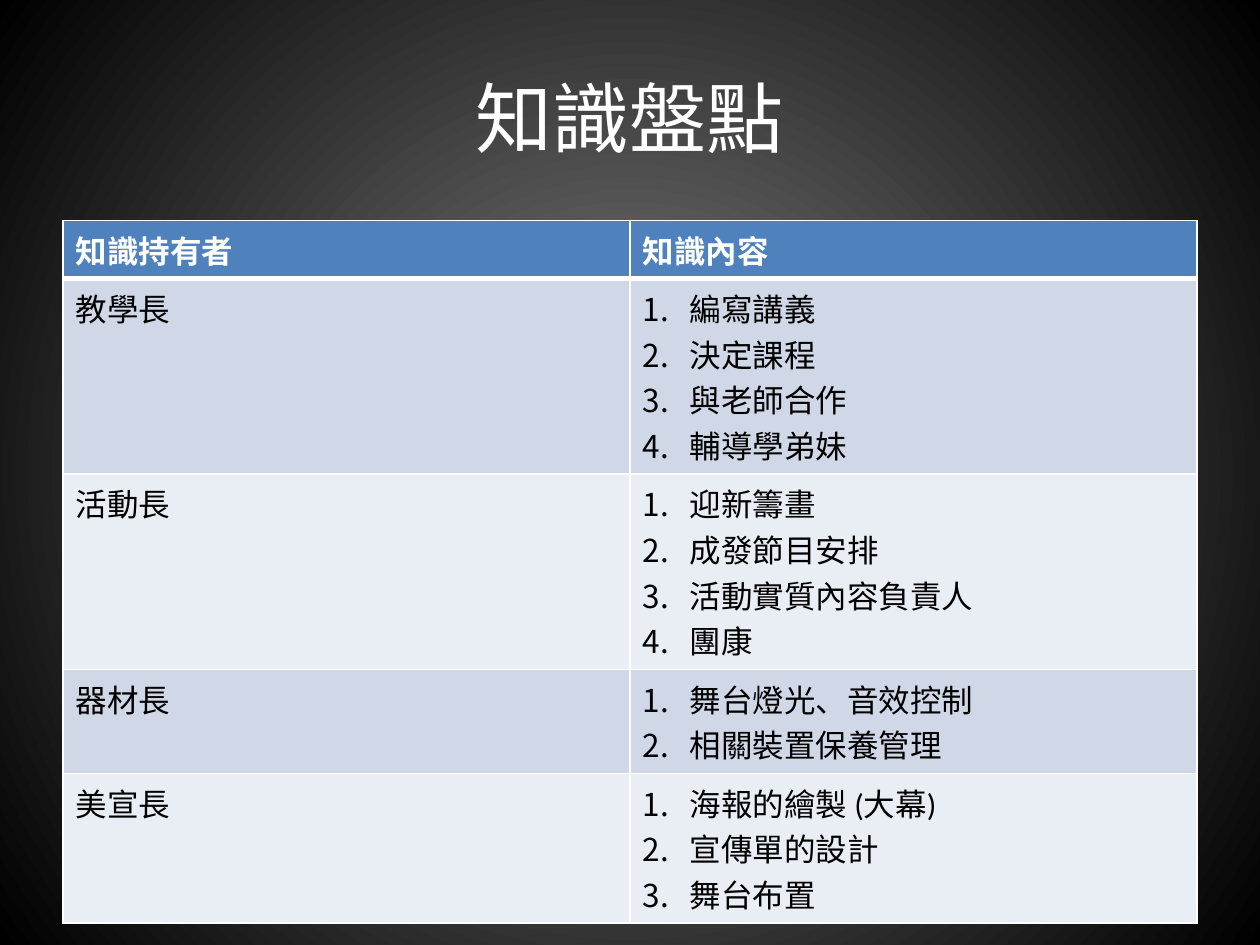
from lxml.etree import SubElement
from pptx import Presentation
from pptx.dml.color import RGBColor
from pptx.enum.text import MSO_ANCHOR, PP_ALIGN
from pptx.oxml.ns import qn
from pptx.util import Inches, Pt

FONT = "Calibri"
WHITE, BLACK, GRAY = "FFFFFF", "000000", "7F7F7F"
HEADER_BLUE = "4F81BD"
BANDS = ["D0D8E8", "E9EDF4"]
LINE_HEIGHT = Inches(1.45 / 4)
CELL_PADDING = Inches(0.1)
HEADINGS = ["知識持有者", "知識內容"]
HOLDERS = [
    ("教學長", ["編寫講義", "決定課程", "與老師合作", "輔導學弟妹"]),
    ("活動長", ["迎新籌畫", "成發節目安排", "活動實質內容負責人", "團康"]),
    ("器材長", ["舞台燈光、音效控制", "相關裝置保養管理"]),
    ("美宣長", ["海報的繪製 (大幕)", "宣傳單的設計", "舞台布置"]),
]


def rgb(color):
    return RGBColor.from_string(color)


def add_run(paragraph, text, size, color, bold=False):
    run = paragraph.add_run()
    run.text = text
    run.font.name = FONT
    run.font.size = Pt(size)
    run.font.bold = bold
    run.font.color.rgb = rgb(color)


def paint_background(slide):
    fill = slide.background.fill
    fill.gradient()
    for stop, color in zip(fill.gradient_stops, [GRAY, BLACK]):
        stop.color.rgb = rgb(color)
    gradient = slide.element.find(".//" + qn("a:gradFill"))
    gradient.remove(gradient.find(qn("a:lin")))
    circle = SubElement(gradient, qn("a:path"), {"path": "circle"})
    SubElement(circle, qn("a:fillToRect"), dict.fromkeys("ltrb", "50000"))


def add_title(slide, text):
    title = slide.shapes.add_textbox(Inches(0.5), Inches(0.3), Inches(9), Inches(1.25))
    frame = title.text_frame
    frame.word_wrap = True
    frame.vertical_anchor = MSO_ANCHOR.MIDDLE
    paragraph = frame.paragraphs[0]
    paragraph.alignment = PP_ALIGN.CENTER
    add_run(paragraph, text, 44, WHITE)


def add_borders(cell, top=1, bottom=1):
    properties = cell._tc.get_or_add_tcPr()
    for side, width in zip("LRTB", [1, 1, top, bottom]):
        line = SubElement(properties, qn(f"a:ln{side}"), {"w": str(Pt(width))})
        solid = SubElement(line, qn("a:solidFill"))
        SubElement(solid, qn("a:srgbClr"), {"val": WHITE})


def number_paragraph(paragraph):
    properties = paragraph._p.get_or_add_pPr()
    indent = Inches(3 / 8)
    properties.set("marL", str(indent))
    properties.set("indent", str(-indent))
    SubElement(properties, qn("a:buFont"), {"typeface": "+mj-lt"})
    SubElement(properties, qn("a:buAutoNum"), {"type": "arabicPeriod"})


def fill_cell(cell, lines, fill, color, bold=False, numbered=False):
    cell.fill.solid()
    cell.fill.fore_color.rgb = rgb(fill)
    frame = cell.text_frame
    for index, text in enumerate(lines):
        paragraph = frame.add_paragraph() if index else frame.paragraphs[0]
        if numbered:
            number_paragraph(paragraph)
        add_run(paragraph, text, 18, color, bold)


def add_knowledge_table(slide):
    line_counts = [1] + [len(topics) for _, topics in HOLDERS]
    heights = [CELL_PADDING + LINE_HEIGHT * count for count in line_counts]
    table = slide.shapes.add_table(
        len(heights), 2, Inches(0.5), Inches(1.75), Inches(9), sum(heights)
    ).table
    for row, height in zip(table.rows, heights):
        row.height = height
    for column, heading in enumerate(HEADINGS):
        cell = table.cell(0, column)
        add_borders(cell, bottom=3)
        fill_cell(cell, [heading], HEADER_BLUE, WHITE, bold=True)
    for row, (holder, topics) in enumerate(HOLDERS, 1):
        band = BANDS[(row - 1) % 2]
        for column, lines in enumerate([[holder], topics]):
            cell = table.cell(row, column)
            add_borders(cell, top=3 if row == 1 else 1)
            fill_cell(cell, lines, band, BLACK, numbered=column == 1)


def main():
    presentation = Presentation()
    presentation.slide_width = Inches(10)
    presentation.slide_height = Inches(7.5)
    slide = presentation.slides.add_slide(presentation.slide_layouts[6])
    paint_background(slide)
    add_title(slide, "知識盤點")
    add_knowledge_table(slide)
    presentation.save("out.pptx")


if __name__ == "__main__":
    main()
